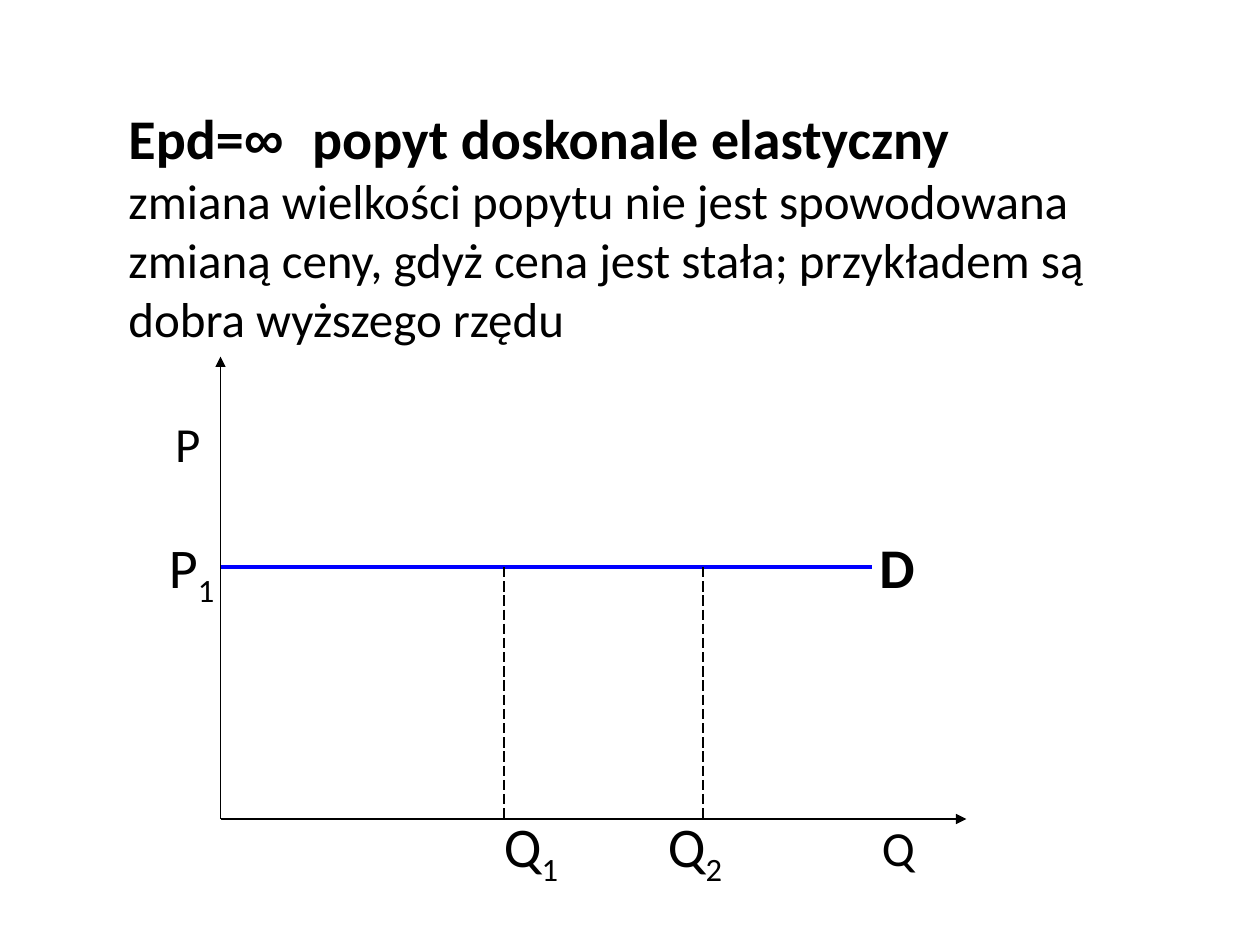
from dataclasses import dataclass

from lxml.etree import SubElement
from pptx import Presentation
from pptx.dml.color import RGBColor
from pptx.enum.dml import MSO_LINE
from pptx.enum.shapes import MSO_CONNECTOR
from pptx.oxml.ns import qn
from pptx.util import Inches, Pt


@dataclass(frozen=True)
class Theme:
    ink: RGBColor = RGBColor(0, 0, 0)
    demand: RGBColor = RGBColor(0, 0, 0xFF)
    font: str = "Calibri"
    symbol_font: str = "Arial"
    large: int = 32
    body: int = 28
    thin: float = 0.75
    thick: float = 2.25
    ascent: float = 0.95  # baseline depth as a share of the type size


THEME = Theme()


@dataclass(frozen=True)
class Label:
    text: str
    x: float
    baseline: float
    size: int = THEME.large
    sub: str = ""
    bold: bool = False


@dataclass(frozen=True)
class Line:
    x1: float
    y1: float
    x2: float
    y2: float
    color: RGBColor = THEME.ink
    width: float = THEME.thin
    arrow: bool = False
    dashed: bool = False


def add_text_box(s, x: float, y: float, w: float, h: float):
    tf = s.shapes.add_textbox(Inches(x), Inches(y), Inches(w), Inches(h)).text_frame
    tf.margin_left = tf.margin_right = tf.margin_top = tf.margin_bottom = 0
    tf.word_wrap = True
    return tf


def set_font(p, size: int, bold: bool = False) -> None:
    p.font.name = THEME.font
    p.font.size = Pt(size)
    p.font.bold = bold
    p.font.color.rgb = THEME.ink


def draw_label(s, label: Label) -> None:
    top = label.baseline - THEME.ascent * label.size / 72
    p = add_text_box(s, label.x, top, 0.6, 0.55).paragraphs[0]
    set_font(p, label.size, label.bold)
    p.add_run().text = label.text
    if label.sub:
        r = p.add_run()
        r.text = label.sub
        r.font._element.set("baseline", "-25000")


def draw_line(s, line: Line) -> None:
    c = s.shapes.add_connector(MSO_CONNECTOR.STRAIGHT, Inches(line.x1), Inches(line.y1),
                               Inches(line.x2), Inches(line.y2))
    c.line.color.rgb = line.color
    c.line.width = Pt(line.width)
    if line.dashed:
        c.line.dash_style = MSO_LINE.LONG_DASH
    if line.arrow:
        SubElement(c.line._get_or_add_ln(), qn("a:tailEnd"), type="triangle")
    SubElement(c._element.spPr, qn("a:effectLst"))


def draw_heading(s) -> None:
    tf = add_text_box(s, 1.02, 0.82, 8.13, 2)
    p = tf.paragraphs[0]
    set_font(p, THEME.large, bold=True)
    for text in ("Epd=", "∞ ", " popyt doskonale elastyczny"):
        r = p.add_run()
        r.text = text
        if "∞" in text:
            r.font.name = THEME.symbol_font
    p = tf.add_paragraph()
    p.text = ("zmiana wielkości popytu nie jest spowodowana zmianą ceny, "
              "gdyż cena jest stała; przykładem są dobra wyższego rzędu")
    set_font(p, THEME.body)


def main() -> None:
    prs = Presentation()
    prs.slide_width, prs.slide_height = Inches(10), Inches(7.5)
    s = prs.slides.add_slide(prs.slide_layouts[6])

    draw_heading(s)

    # Axes, demand line and quantity markers
    origin_x, origin_y, price_y = 1.75, 6.5, 4.5
    lines = [
        Line(origin_x, origin_y, origin_x, 2.83, arrow=True),
        Line(origin_x, origin_y, 7.67, origin_y, arrow=True),
        Line(origin_x, price_y, 6.92, price_y, THEME.demand, THEME.thick),
    ]
    lines += [Line(x, price_y, x, origin_y, dashed=True) for x in (4, 5.58)]
    for line in lines:
        draw_line(s, line)

    # Axis, price and quantity labels
    price_base, quantity_base = price_y + 0.15, origin_y + 0.36
    for label in (
        Label("P", 1.39, 3.65, THEME.body),
        Label("P", 1.34, price_base, sub="1"),
        Label("D", 6.98, price_base, bold=True),
        Label("Q", 4, quantity_base, sub="1"),
        Label("Q", 5.3, quantity_base, sub="2"),
        Label("Q", 7, quantity_base, THEME.body),
    ):
        draw_label(s, label)

    prs.save("out.pptx")


if __name__ == "__main__":
    main()
